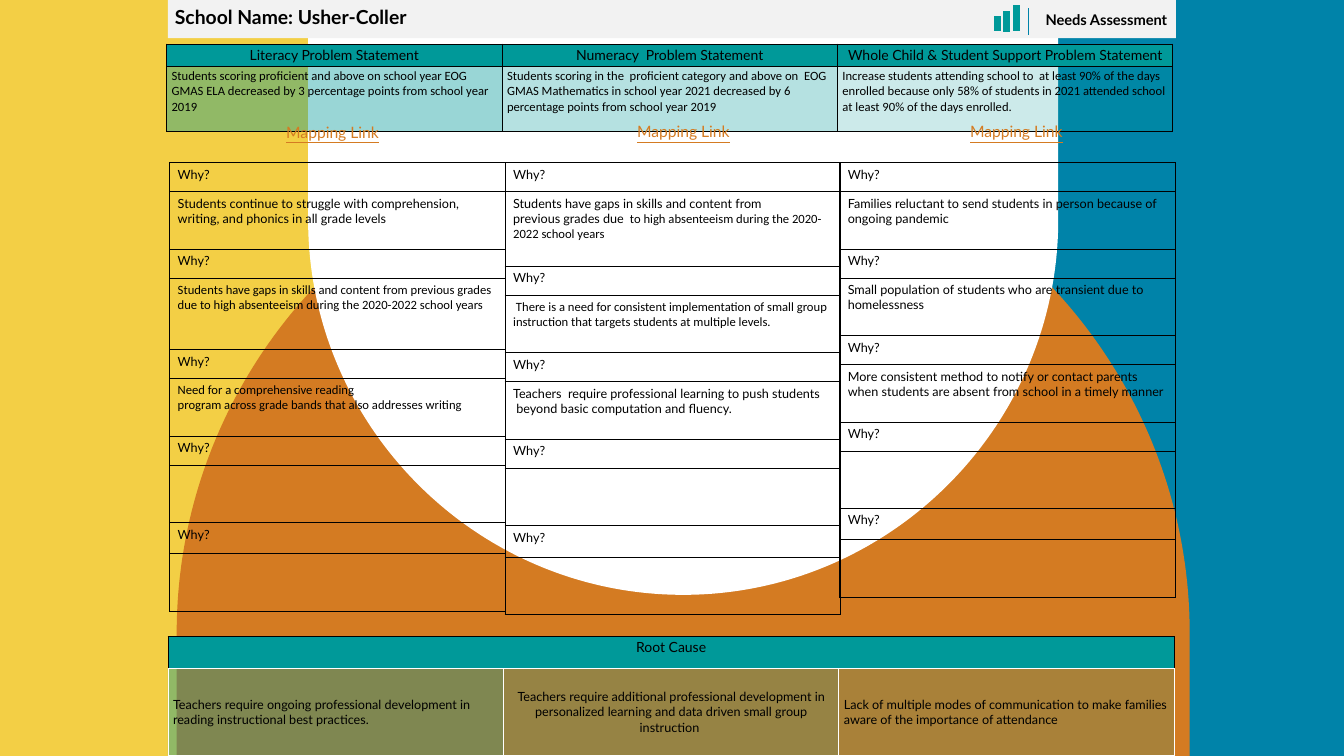
from typing import NamedTuple, Optional

from lxml import etree
from pptx import Presentation
from pptx.dml.color import RGBColor
from pptx.enum import shapes, text
from pptx.oxml.ns import qn
from pptx.util import Pt

WIDTH, HEIGHT = 960, 540
TEAL, BLUE, ORANGE, YELLOW = "009999", "0083A9", "D47B22", "F3CF45"
BLACK, WHITE, GREY = "000000", "FFFFFF", "F2F2F2"
LATO, CALIBRI = "Lato", "Calibri"
LEFT, CENTER, RIGHT = text.PP_ALIGN.LEFT, text.PP_ALIGN.CENTER, text.PP_ALIGN.RIGHT
TOP, MIDDLE = text.MSO_ANCHOR.TOP, text.MSO_ANCHOR.MIDDLE
NO_BREAK_SPACE = chr(160)  # typed as ~ in the wording below
COLUMN = 239.6
WHY, LAST_WHY, ANSWER = 20.8, 22.3, 41
TIGHT, ROOMY = (3.6, 1.8), (5.76, 2.88)
TINTS = (40, 29, 20)


class Run(NamedTuple):
    text: str
    font: str = LATO
    size: float = 9
    bold: bool = False
    underline: bool = False
    color: str = BLACK


class Cell(NamedTuple):
    runs: tuple[Run, ...] = ()
    align: text.PP_ALIGN = LEFT
    anchor: text.MSO_ANCHOR = TOP
    fill: Optional[str] = None
    alpha: int = 100
    borders: tuple[str, str, str, str] = (BLACK,) * 4  # left, right, top, bottom


class Grid(NamedTuple):
    left: float
    top: float
    heights: list[float]
    rows: list[list[Cell]]
    inset: tuple[float, float]


class Label(NamedTuple):
    left: float
    top: float
    width: float
    align: text.PP_ALIGN
    run: Run


class Answer(NamedTuple):
    runs: tuple[Run, ...]
    height: float = ANSWER


def rgb(color: str) -> RGBColor:
    return RGBColor.from_string(color)


def write(tf, runs: tuple[Run, ...], align) -> None:
    p = tf.paragraphs[0]
    p.alignment = align
    for run in runs:
        r = p.add_run()
        r.text = run.text.replace("~", NO_BREAK_SPACE)
        r.font.name, r.font.size = run.font, Pt(run.size)
        r.font.bold, r.font.underline = run.bold, run.underline
        r.font.color.rgb = rgb(run.color)


def paint(sp, fill: str) -> None:
    sp.shadow.inherit = False
    sp.fill.solid()
    sp.fill.fore_color.rgb = rgb(fill)
    sp.line.fill.background()


def add_outline(parent, points: list[tuple[float, float]], fill: str):
    corners = [(Pt(x), Pt(y)) for x, y in points]
    builder = parent.build_freeform(*corners[0], scale=1.0)
    builder.add_line_segments(corners[1:], close=True)
    sp = builder.convert_to_shape()
    paint(sp, fill)
    return sp


def box(left: float, top: float, width: float, height: float) -> list[tuple[float, float]]:
    right, bottom = left + width, top + height
    return [(left, top), (right, top), (right, bottom), (left, bottom)]


def add_arch(parent, x: float, y: float, radius: float, edge: float, fill: str) -> None:
    """Half circle around (x, y) with straight sides that run to the slide edge."""
    tip = y - radius if edge > y else y + radius
    pull = 0.55
    handle, reach = y + pull * (tip - y), pull * radius
    half = [(radius, edge), (radius, y), (radius, handle), (reach, tip)]
    points = [(x + dx, py) for dx, py in half] + [(x, tip)]
    points += [(x - dx, py) for dx, py in reversed(half)]
    sp = add_outline(parent, points, fill)
    lines = list(sp._element.iter(qn("a:lnTo")))
    for controls in (lines[1:4], lines[4:7]):
        curve = etree.Element(qn("a:cubicBezTo"))
        controls[0].addprevious(curve)
        for line in controls:
            curve.append(line[0])
            line.getparent().remove(line)


def add_label(s, label: Label) -> None:
    sp = s.shapes.add_shape(shapes.MSO_SHAPE.ROUNDED_RECTANGLE, Pt(label.left),
                            Pt(label.top), Pt(label.width), Pt(28))
    sp.adjustments[0] = 0
    sp.shadow.inherit = False
    sp.fill.background()
    sp.line.fill.background()
    tf = sp.text_frame
    tf.margin_left = tf.margin_right = tf.margin_top = tf.margin_bottom = Pt(5)
    tf.vertical_anchor = MIDDLE
    tf.word_wrap = True
    write(tf, (label.run,), label.align)


def add_link(s, left: float, top: float) -> None:
    tf = s.shapes.add_textbox(Pt(left), Pt(top), Pt(82.1), Pt(34.5)).text_frame
    tf.word_wrap = True
    write(tf, (Run("Mapping Link", size=11.2, underline=True, color=ORANGE),), CENTER)


def style_cell(cell, look: Cell, inset: tuple[float, float]) -> None:
    cell.margin_left = cell.margin_right = Pt(inset[0])
    cell.margin_top = cell.margin_bottom = Pt(inset[1])
    cell.vertical_anchor = look.anchor
    props = cell._tc.get_or_add_tcPr()
    if look.fill:
        cell.fill.solid()
        cell.fill.fore_color.rgb = rgb(look.fill)
        if look.alpha < 100:
            tint = props.find(f".//{qn('a:srgbClr')}")
            etree.SubElement(tint, qn("a:alpha"), val=str(look.alpha * 1000))
    else:
        cell.fill.background()
    for i, (side, color) in enumerate(zip("LRTB", look.borders)):
        line = etree.Element(qn(f"a:ln{side}"), w=str(Pt(0.75)))
        solid = etree.SubElement(line, qn("a:solidFill"))
        etree.SubElement(solid, qn("a:srgbClr"), val=color)
        props.insert(i, line)
    write(cell.text_frame, look.runs, look.align)


def add_grid(s, grid: Grid):
    columns = len(grid.rows[0])
    frame = s.shapes.add_table(len(grid.rows), columns, Pt(grid.left), Pt(grid.top),
                               Pt(COLUMN * columns), Pt(sum(grid.heights)))
    table = frame.table
    table.first_row = table.horz_banding = False
    for column in table.columns:
        column.width = Pt(COLUMN)
    for i, (height, row) in enumerate(zip(grid.heights, grid.rows)):
        table.rows[i].height = Pt(height)
        for j, look in enumerate(row):
            style_cell(table.cell(i, j), look, grid.inset)
    return table


def why_grid(left: float, answers: list[Answer]) -> Grid:
    """Five question rows, each followed by its answer row."""
    answers = answers + [Answer(())] * (5 - len(answers))
    heights, rows = [], []
    for i, answer in enumerate(answers):
        heights += [LAST_WHY if i == 4 else WHY, answer.height]
        question = Run("Why?~" if i in (0, 4) else "Why?")
        rows += [[Cell((question,))], [Cell(answer.runs)]]
    return Grid(left, 116.2, heights, rows, ROOMY)


STATEMENTS = {
    "Literacy Problem Statement": "Students scoring proficient and above on school year EOG GMAS~ELA decreased by 3 percentage points from school year 2019",
    "Numeracy~ Problem Statement": "Students scoring in the~ proficient category and above on~ EOG GMAS~Mathematics in school year 2021 decreased by 6 percentage points from school year~2019",
    "Whole Child & Student Support Problem Statement": "Increase students attending school to~ at least~90% of the days enrolled because only 58% of students in 2021~attended school at least 90% of the days enrolled.",
}
CAUSES = [
    ("Teachers require ongoing professional development in reading instructional best practices.", LEFT),
    ("Teachers require additional professional development in personalized learning and data driven small group instruction~", CENTER),
    ("Lack of multiple modes of communication to make families aware of the importance of attendance~~", LEFT),
]
LITERACY = [
    Answer((Run("Students continue to struggle with comprehension, writing, and phonics~in~all~grade levels"),)),
    Answer((Run("Students have gaps in skills and content~from~previous~grades due to high absenteeism during the~2020-2022 school years", CALIBRI),), 51),
    Answer((Run("Need for a comprehensive reading program~across~grade~bands that also addresses writing", CALIBRI),)),
]
NUMERACY = [
    Answer((Run("Students have gaps in skills and content from previous~grades due~"),
            Run("~to high absenteeism~during the~2020-2022 school years", CALIBRI)), 53.3),
    Answer((Run("~There is a need for consistent implementation of~small~group instruction that targets students at multiple~levels.", CALIBRI),)),
    Answer((Run("Teachers~ require professional learning to~push students ~beyond basic~computation and fluency."),)),
]
WHOLE_CHILD = [
    Answer((Run("Families reluctant to send students in person because of ongoing pandemic"),)),
    Answer((Run("Small population of students who are transient due to homelessness"),)),
    Answer((Run("More consistent method to notify or contact parents when students are absent from school in a timely manner"),)),
]


def main() -> None:
    prs = Presentation()
    prs.slide_width, prs.slide_height = Pt(WIDTH), Pt(HEIGHT)
    s = prs.slides.add_slide(prs.slide_layouts[6])
    s.background.fill.solid()
    s.background.fill.fore_color.rgb = rgb(BLUE)
    add_outline(s.shapes, box(0, 0, 417, HEIGHT), YELLOW)
    add_arch(s.shapes, 488, 452.5, 361.8, HEIGHT, ORANGE)
    add_arch(s.shapes, 488, 157, 267.9, 0, WHITE)

    banner = s.shapes.add_shape(shapes.MSO_SHAPE.RECTANGLE, Pt(120), Pt(-0.75), Pt(720), Pt(28))
    paint(banner, GREY)
    icon = s.shapes.add_group_shape()
    for i, height in enumerate((11, 15, 19)):
        add_outline(icon.shapes, box(710 + 6.8 * i, 22.5 - height, 5, height), TEAL)
    add_outline(icon.shapes, box(734.4, 6, 0.8, 19), BLUE)
    add_label(s, Label(686.2, 0, 152.6, RIGHT, Run("Needs Assessment", size=10.5, bold=True)))
    add_label(s, Label(120, -2, 235, LEFT, Run("School Name: Usher-Coller", size=13.8, bold=True)))

    titles = [Cell((Run(title, size=10),), CENTER, fill=TEAL) for title in STATEMENTS]
    details = [Cell((Run(detail, CALIBRI),), fill=TEAL, alpha=tint)
               for detail, tint in zip(STATEMENTS.values(), TINTS)]
    add_grid(s, Grid(119, 31.5, [15.7, 46.8], [titles, details], TIGHT))
    heading = Cell((), CENTER, fill=TEAL, borders=(BLACK, BLACK, BLACK, WHITE))
    root_row = [heading._replace(runs=(Run("Root Cause", size=10),)), heading, heading]
    causes = [Cell((Run(cause),), align, MIDDLE, TEAL, tint, (WHITE,) * 4)
              for (cause, align), tint in zip(CAUSES, TINTS)]
    root = add_grid(s, Grid(120, 454.7, [22.8, 62.2], [root_row, causes], TIGHT))
    root.cell(0, 0).merge(root.cell(0, 2))

    for left, answers in ((121.2, LITERACY), (360.8, NUMERACY), (599.8, WHOLE_CHILD)):
        add_grid(s, why_grid(left, answers))
    for left, top in ((196.5, 84.2), (447.1, 83.7), (684.9, 83.7)):
        add_link(s, left, top)
    prs.save("out.pptx")


if __name__ == "__main__":
    main()
